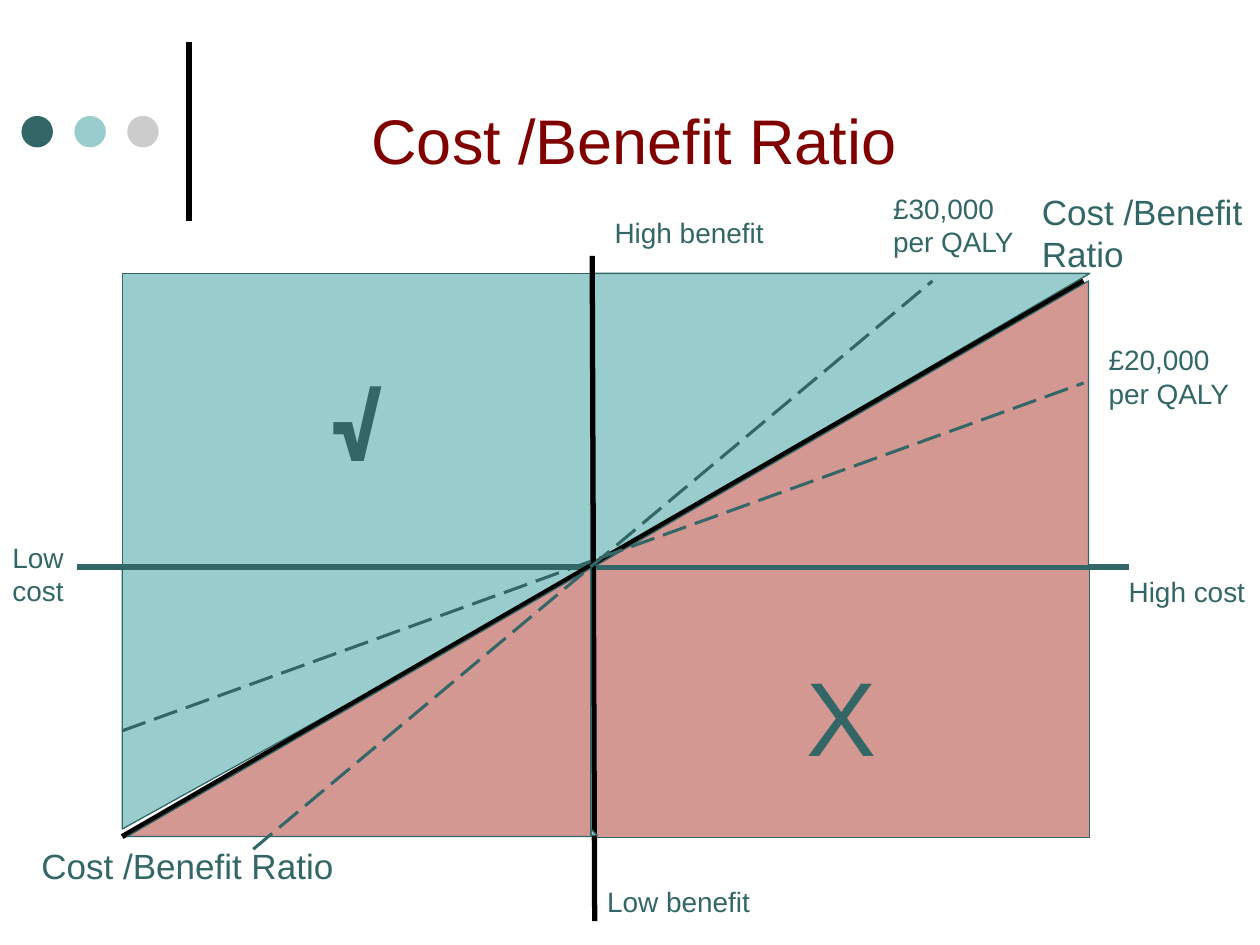
"""Build the cost and benefit ratio slide."""
import pptx
import pptx.util
import pptx.dml.color
import pptx.enum.dml
import pptx.enum.shapes
import pptx.enum.text
import lxml.etree

Inches = pptx.util.Inches
Pt = pptx.util.Pt
RGB = pptx.dml.color.RGBColor
KIND = pptx.enum.shapes.MSO_SHAPE
ALIGN = pptx.enum.text.PP_ALIGN
ANCHOR = pptx.enum.text.MSO_ANCHOR
DASH = pptx.enum.dml.MSO_LINE.LONG_DASH

TEAL = RGB(0x33, 0x66, 0x66)
AQUA = RGB(0x99, 0xCC, 0xCC)
GREY = RGB(0xCC, 0xCC, 0xCC)
ROSE = RGB(0xD4, 0x98, 0x92)
MAROON = RGB(0x80, 0, 0)
BLACK = RGB(0, 0, 0)

deck = pptx.Presentation()
deck.slide_width, deck.slide_height = Inches(10), Inches(7.5)
slide = deck.slides.add_slide(deck.slide_layouts[6])
shapes = slide.shapes


def add_area(kind, box, fill, flip=None, edge=TEAL):
    area = shapes.add_shape(kind, *map(Inches, box))
    area.shadow.inherit = False
    area.fill.solid()
    area.fill.fore_color.rgb = fill
    if edge is None:
        area.line.fill.background()
    else:
        area.line.color.rgb = edge
        area.line.width = Pt(0.75)
    if flip:
        area.element.spPr.xfrm.set(flip, "1")
    return area


def add_line(ends, color, width, dash=None):
    line = shapes.add_connector(pptx.enum.shapes.MSO_CONNECTOR.STRAIGHT, *map(Inches, ends))
    for name, value in {"width": Pt(width), "dash_style": dash}.items():
        setattr(line.line, name, value)
    line.line.color.rgb = color
    props = line.element.spPr
    lxml.etree.SubElement(props, pptx.oxml.ns.qn("a:effectLst"))


add_line((1.5, 1.75, 1.5, 0.33), BLACK, 3)
for step, color in enumerate((TEAL, AQUA, GREY)):
    add_area(KIND.OVAL, (0.17 + 0.42 * step, 0.92, 0.25, 0.25), color, edge=None)

good = add_area(KIND.RECTANGLE, (0.97, 2.17, 3.73, 2.32), AQUA)
for box in ((0.97, 4.49, 3.77, 2.09), (4.69, 2.17, 3.96, 2.32)):
    add_area(KIND.RIGHT_TRIANGLE, box, AQUA, "flipV")
bad = add_area(KIND.RECTANGLE, (4.7, 4.51, 3.95, 2.14), ROSE)

for area, mark, font, bold in (
    (good, "√", "Roboto Condensed", True),
    (bad, "X", "Arial", False),
):
    frame = area.text_frame
    frame.text = mark
    frame.vertical_anchor = ANCHOR.TOP
    frame.margin_top = Inches(0.66)
    para = frame.paragraphs[0]
    para.alignment = ALIGN.CENTER
    for name, value in {"name": font, "size": Pt(60), "bold": bold}.items():
        setattr(para.runs[0].font, name, value)
    para.runs[0].font.color.rgb = TEAL

add_line((0.61, 4.5, 8.96, 4.5), TEAL, 3)
add_line((4.7, 2.03, 4.72, 7.31), BLACK, 3)
add_line((0.97, 6.64, 8.6, 2.23), BLACK, 3)

add_area(KIND.RIGHT_TRIANGLE, (4.69, 6.58, 0.05, 0.05), AQUA)
for box in ((1.01, 4.51, 3.68, 2.13), (4.73, 2.23, 3.91, 2.26)):
    add_area(KIND.RIGHT_TRIANGLE, box, ROSE, "flipH")

for ends in ((0.97, 5.8, 8.6, 3.04), (2.01, 6.74, 7.4, 2.23)):
    add_line(ends, TEAL, 1.75, DASH)

for text, box, size, color, wrap in (
    ("Cost /Benefit Ratio", (2.85, 0.76, 4.55, 0.71), 36, MAROON, True),
    ("Low cost", (0, 4.24, 1.01, 0.64), 16, TEAL, True),
    ("High cost", (8.86, 4.51, 1.14, 0.37), 16, TEAL, False),
    ("High benefit", (4.78, 1.66, 1.4, 0.37), 16, TEAL, False),
    ("Low benefit", (4.72, 6.97, 1.35, 0.37), 16, TEAL, False),
    ("Cost /Benefit\nRatio", (8.17, 1.46, 1.83, 0.77), 20, TEAL, True),
    ("Cost /Benefit Ratio", (0.23, 6.65, 2.54, 0.44), 20, TEAL, False),
    ("£20,000\nper QALY", (8.7, 2.67, 1.17, 0.64), 16, TEAL, False),
    ("£30,000\nper QALY", (6.99, 1.47, 1.17, 0.64), 16, TEAL, False),
):
    frame = shapes.add_textbox(*map(Inches, box)).text_frame
    frame.text = text
    frame.word_wrap = wrap
    for para in frame.paragraphs:
        for name, value in {"name": "Arial", "size": Pt(size)}.items():
            setattr(para.runs[0].font, name, value)
        para.runs[0].font.color.rgb = color

deck.save("out.pptx")
